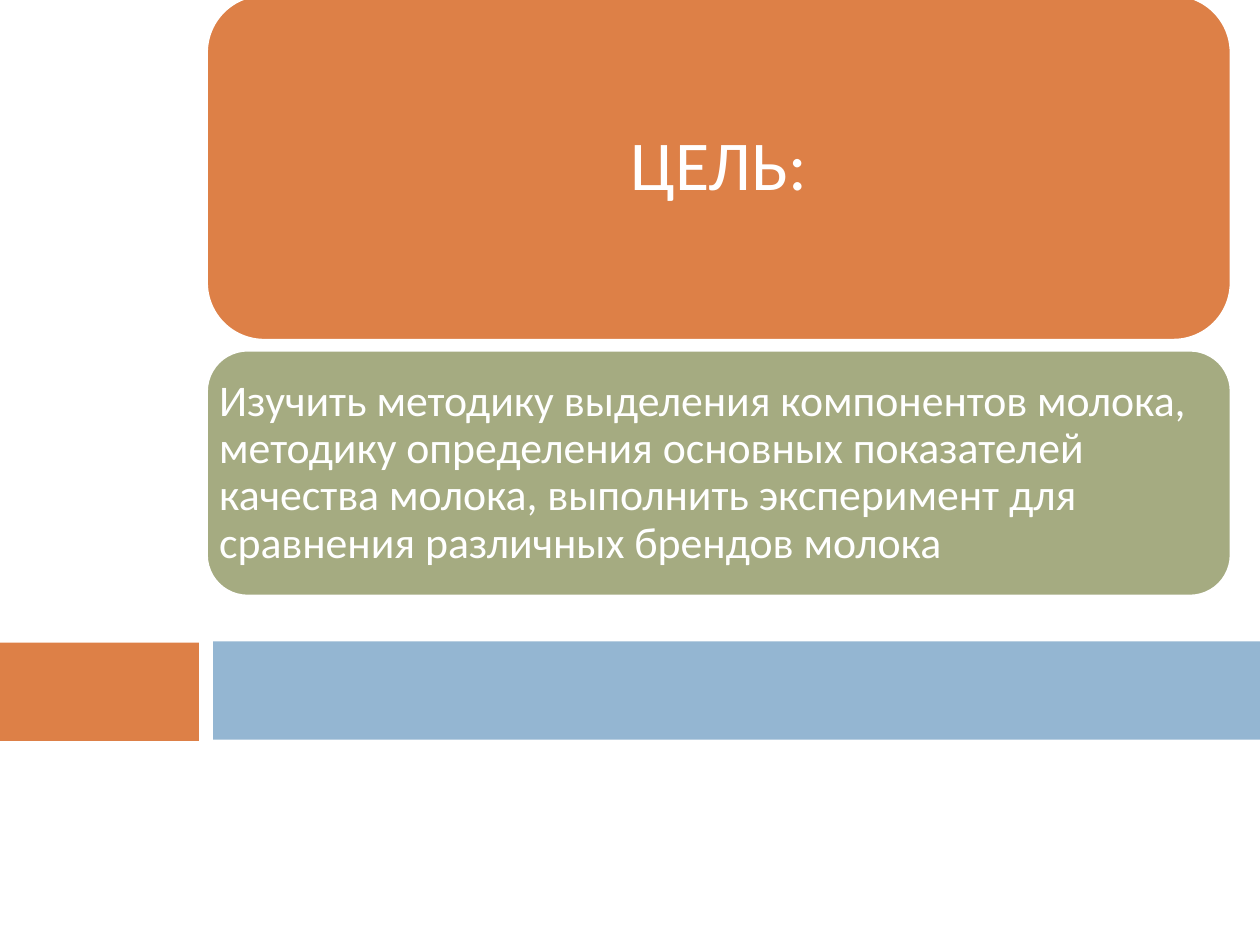
from pptx import Presentation
from pptx.dml.color import RGBColor
from pptx.enum.shapes import MSO_SHAPE
from pptx.enum.text import MSO_ANCHOR, MSO_AUTO_SIZE, PP_ALIGN
from pptx.util import Pt

# Content
TITLE = "ЦЕЛЬ:"
GOAL = ("Изучить методику выделения компонентов молока, методику определения "
        "основных показателей качества молока, выполнить эксперимент для "
        "сравнения различных брендов молока")

COLORS = {"orange": "DD8047", "blue": "94B6D2", "green": "A5AB81", "white": "FFFFFF"}
FONT = "Calibri"

# Geometry in points: left, top, width, height
BANDS = [
    ("orange", (-0.72, 367.2, 115.2, 56.16)),
    ("blue", (121.68, 366.48, 598.32, 56.16)),
    ("white", (113.76, 0, 7.92, 540)),
]
CARD_LEFT, CARD_WIDTH = 118.08, 585.36
TITLE_AREA = (CARD_LEFT, -2.88, CARD_WIDTH, 197.28)
GOAL_AREA = (CARD_LEFT, 200.16, CARD_WIDTH, 140.4)
CORNER = 0.16667
CORNER_INSET = 0.29289  # share of the corner radius that the shape keeps clear of text


def color(name):
    return RGBColor.from_string(COLORS[name])


def add_block(page, kind, fill, area):
    block = page.shapes.add_shape(kind, *map(Pt, area))
    block.shadow.inherit = False
    block.fill.solid()
    block.fill.fore_color.rgb = color(fill)
    block.line.fill.background()
    return block


def add_card(page, fill, area):
    card = add_block(page, MSO_SHAPE.ROUNDED_RECTANGLE, fill, area)
    card.adjustments[0] = CORNER
    card.line.color.rgb = color("white")
    card.line.width = Pt(1.5)
    return card


def write(box, text, size, align, inset):
    frame = box.text_frame
    frame.text = text
    frame_format = {"word_wrap": True, "auto_size": MSO_AUTO_SIZE.NONE,
                    "vertical_anchor": MSO_ANCHOR.MIDDLE}
    for side in ("left", "top", "right", "bottom"):
        frame_format[f"margin_{side}"] = Pt(inset)
    for name, value in frame_format.items():
        setattr(frame, name, value)
    para = frame.paragraphs[0]
    for name, value in {"alignment": align, "line_spacing": 0.9}.items():
        setattr(para, name, value)
    span = para.runs[0]
    for name, value in {"name": FONT, "size": Pt(size), "bold": False}.items():
        setattr(span.font, name, value)
    span.font.color.rgb = color("white")


deck = Presentation()
deck.slide_width, deck.slide_height = Pt(720), Pt(540)
page = deck.slides.add_slide(deck.slide_layouts[5])

# Decorative bands
for fill, area in BANDS:
    add_block(page, MSO_SHAPE.RECTANGLE, fill, area)

# Title card, with the title placed in front of it
title_card = add_card(page, "orange", TITLE_AREA)
title = page.shapes.title
for name, value in zip(("left", "top", "width", "height"), TITLE_AREA):
    setattr(title, name, Pt(value))
write(title, TITLE, 40, PP_ALIGN.CENTER, 12)
title_card.element.addnext(title.element)

# Goal card
goal_card = add_card(page, "green", GOAL_AREA)
goal_inset = round(7.2 - CORNER_INSET * CORNER * GOAL_AREA[3], 2)
write(goal_card, GOAL, 25, PP_ALIGN.LEFT, goal_inset)

deck.save("out.pptx")
